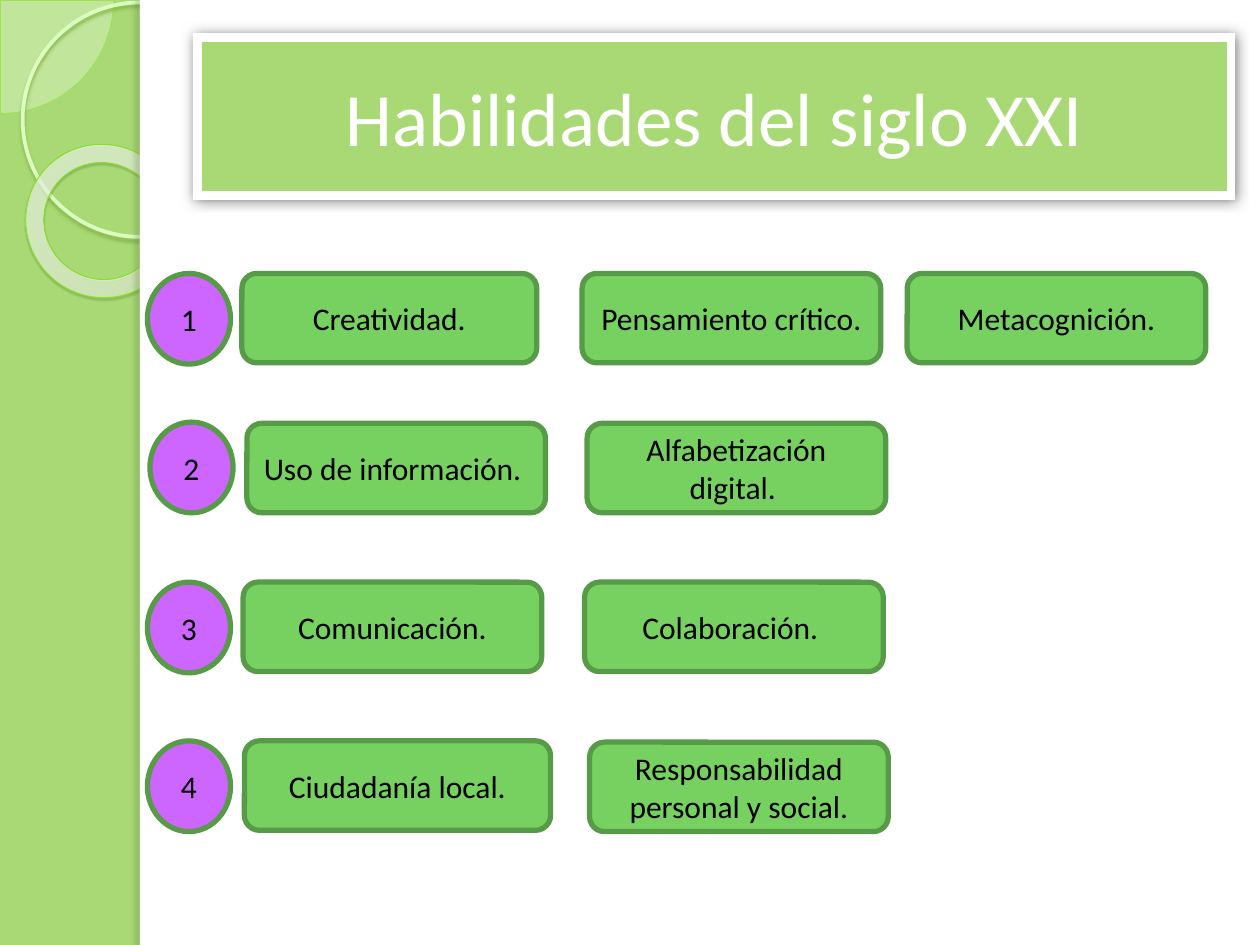
from lxml import etree
from pptx import Presentation
from pptx.dml.color import RGBColor
from pptx.enum.shapes import MSO_SHAPE as Shape
from pptx.enum.text import MSO_ANCHOR as Anchor, PP_ALIGN as Align
from pptx.oxml import parse_xml
from pptx.oxml.ns import nsdecls, qn
from pptx.util import Inches, Pt

GREEN, WHITE, BLACK = "A9D975", "FFFFFF", "000000"
BOX_GREEN, EDGE_GREEN, PURPLE = "76D161", "579B48", "CC66FF"

# Number, its left and top, then each box: left, top, width, text
ROWS = [
    ("1", 1.17, 2.17, [(1.92, 2.17, 2.34, "Creatividad."),
                       (4.62, 2.17, 2.37, "Pensamiento crítico. "),
                       (7.2, 2.17, 2.37, "Metacognición.")]),
    ("2", 1.19, 3.35, [(1.96, 3.36, 2.37, "Uso de información. "),
                       (4.66, 3.36, 2.37, "Alfabetización digital. ")]),
    ("3", 1.17, 4.62, [(1.93, 4.62, 2.37, "Comunicación."),
                       (4.64, 4.62, 2.37, "Colaboración. ")]),
    ("4", 1.17, 5.88, [(1.94, 5.88, 2.43, "Ciudadanía local."),
                       (4.68, 5.89, 2.37, "Responsabilidad personal y social.")]),
]


def color(value):
    return RGBColor.from_string(value)


def color_xml(value, alpha):
    return f'<a:srgbClr val="{value}"><a:alpha val="{alpha * 1000}"/></a:srgbClr>'


class SlideBuilder:
    font = "Calibri"

    def __init__(self, slide):
        self.slide = slide

    def background(self, value):
        fill = self.slide.background.fill
        fill.solid()
        fill.fore_color.rgb = color(value)

    def shape(self, kind, left, top, width, height, fill=None, line=None, line_width=0):
        shape = self.slide.shapes.add_shape(
            kind, Inches(left), Inches(top), Inches(width), Inches(height))
        shape.shadow.inherit = False
        if fill:
            shape.fill.solid()
            shape.fill.fore_color.rgb = color(fill)
        else:
            shape.fill.background()
        if line:
            shape.line.color.rgb = color(line)
            shape.line.width = Pt(line_width)
        else:
            shape.line.fill.background()
        return shape

    def transparency(self, shape, alpha):
        rgb = shape.fill._xPr.find(qn("a:solidFill"))[0]
        etree.SubElement(rgb, qn("a:alpha"), val=str(alpha * 1000))

    def circle_gradient(self, shape, stops, focus):
        stops_xml = "".join(f'<a:gs pos="{position * 1000}">{color_xml(value, alpha)}</a:gs>'
                            for position, value, alpha in stops)
        left, top, right, bottom = (side * 1000 for side in focus)
        properties = shape._element.spPr
        properties.replace(properties.find(qn("a:noFill")), parse_xml(
            f'<a:gradFill {nsdecls("a")}><a:gsLst>{stops_xml}</a:gsLst><a:path path="circle">'
            f'<a:fillToRect l="{left}" t="{top}" r="{right}" b="{bottom}"/>'
            '</a:path></a:gradFill>'))

    def shadow(self, shape, value, alpha, blur, distance, angle):
        effects = shape._element.spPr.find(qn("a:effectLst"))
        effects.append(parse_xml(
            f'<a:outerShdw {nsdecls("a")} blurRad="{Pt(blur)}" dist="{Pt(distance)}" '
            f'dir="{angle * 60000}" algn="ctr" rotWithShape="0">'
            f'{color_xml(value, alpha)}</a:outerShdw>'))

    def miter(self, shape):
        line = shape._element.spPr.find(qn("a:ln"))
        etree.SubElement(line, qn("a:miter"), lim="800000")

    def text(self, shape, text, size, value):
        frame = shape.text_frame
        frame.text = text
        frame.word_wrap = True
        frame.vertical_anchor = Anchor.MIDDLE
        paragraph = frame.paragraphs[0]
        paragraph.alignment = Align.CENTER
        font = paragraph.runs[0].font
        font.name, font.size = self.font, Pt(size)
        font.color.rgb = color(value)

    def label(self, kind, left, top, width, height, fill, text):
        shape = self.shape(kind, left, top, width, height, fill, EDGE_GREEN, 3)
        self.text(shape, text, 18, BLACK)


def main():
    presentation = Presentation()
    presentation.slide_width, presentation.slide_height = Inches(10), Inches(7.5)
    builder = SlideBuilder(presentation.slides.add_slide(presentation.slide_layouts[6]))
    builder.background(GREEN)

    # Side band with its rings
    quarter = builder.shape(Shape.PIE, -0.89, -0.89, 1.79, 1.79, "F2FFE7", "92E539", 0.25)
    quarter.adjustments[0], quarter.adjustments[1] = 0, 54
    builder.transparency(quarter, 33)
    ring = builder.shape(Shape.OVAL, 0.18, 0.02, 1.86, 1.86, None, "DCFFC0", 2.15)
    builder.shadow(ring, "7EB344", 85, 2, 2, 90)
    donut = builder.shape(Shape.DONUT, 0.2, 1.15, 1.23, 1.21, None, "89DE2E", 0.58)
    donut.adjustments[0] = 0.12
    donut.rotation = 38.6
    builder.circle_gradient(
        donut, [(0, "F6FFF0", 70), (70, "FBFFF7", 55), (100, "98FF28", 60)],
        (-408, -50, 508, 150))
    builder.shadow(donut, "3F6219", 35, 1, 1.2, 75)

    # White page and its shaded edge
    builder.shape(Shape.RECTANGLE, 1.11, 0, 8.89, 7.5, WHITE)
    edge = builder.shape(Shape.RECTANGLE, 1.11, 0, 0.08, 7.5, WHITE)
    builder.shadow(edge, "546E38", 25, 3, 3, 180)

    # Title
    title = builder.shape(Shape.RECTANGLE, 1.57, 0.3, 8.2, 1.25, GREEN, WHITE, 5)
    builder.miter(title)
    builder.shadow(title, BLACK, 50, 7.5, 0, 0)
    builder.text(title, "Habilidades del siglo XXI", 43, WHITE)

    # Numbered rows of skills
    for number, number_left, number_top, boxes in ROWS:
        for left, top, width, text in boxes:
            builder.label(Shape.ROUNDED_RECTANGLE, left, top, width, 0.71, BOX_GREEN, text)
        builder.label(Shape.OVAL, number_left, number_top, 0.66, 0.72, PURPLE, number)

    presentation.save("out.pptx")


if __name__ == "__main__":
    main()
